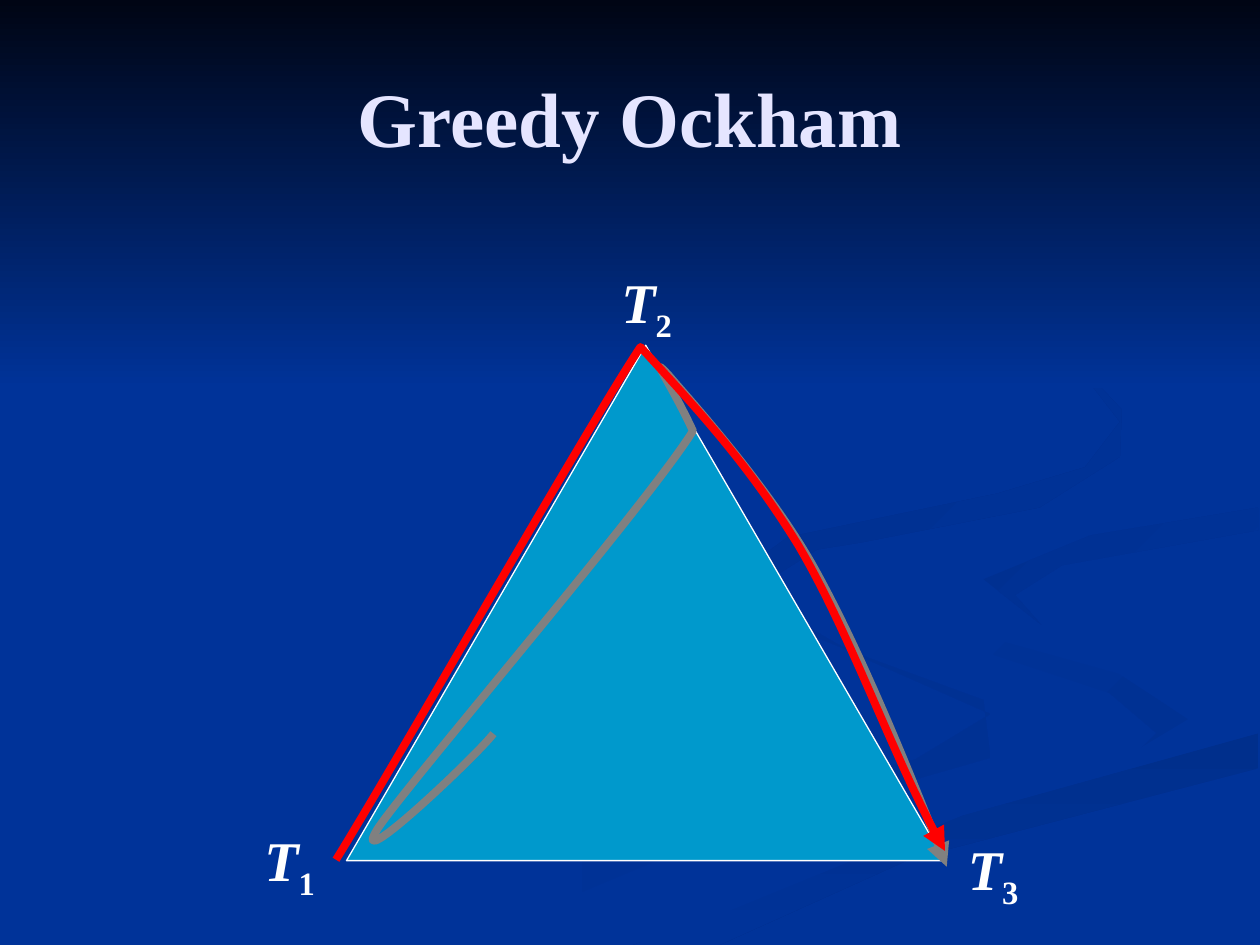
from lxml.etree import SubElement
from pptx import Presentation
from pptx.dml.color import RGBColor
from pptx.enum.shapes import MSO_SHAPE
from pptx.enum.text import MSO_ANCHOR, PP_ALIGN
from pptx.oxml.ns import qn
from pptx.util import Pt

FONT = "Times New Roman"
NAVY = "003399"

SWIRLS = [
    ((NAVY, "003193", 0), [
        (346, 232), (275, 206), (212, 181), (198, 163), (273, 206), (350, 240),
        (307, 266), (172, 300), (0, 372), (44, 372), (190, 311), (350, 265)]),
    ((NAVY, "003193", 45), [
        (463, 243), (423, 217), (330, 191), (305, 166), (336, 201), (418, 228),
        (445, 251), (428, 268), (459, 254)]),
    (("002F8C", NAVY, 90), [
        (146, 372), (195, 372), (304, 323), (503, 271), (503, 251), (334, 298)]),
    ((NAVY, NAVY, 0), [
        (306, 166), (330, 191), (424, 217), (463, 243), (418, 270), (261, 313),
        (127, 372), (158, 370), (334, 298), (503, 251), (503, 220), (395, 194),
        (347, 163), (407, 138), (503, 122), (503, 111), (366, 132)]),
    (("003091", NAVY, 45), [
        (346, 163), (379, 189), (364, 172), (391, 155), (503, 135), (503, 122), (407, 138)]),
    (("002F8E", NAVY, 45), [
        (276, 142), (378, 122), (424, 93), (425, 66), (391, 30), (333, 0), (393, 33),
        (424, 73), (404, 99), (354, 114), (234, 139), (199, 165), (232, 192), (211, 171),
        (251, 146)]),
]
GRAY_ROUTE = [
    (84, 222), (75, 234), (-1, 306), (18, 276), (37, 248), (171, 92), (198, 49), (185, 21),
    (172, 4), (184, 17), (195, 30), (239, 78), (266, 125), (292, 171), (324, 249), (343, 298)]
RED_ROUTE = [
    (-6, 294), (24, 246), (141, 41), (168, 1), (200, 36), (229, 67), (258, 114), (287, 163),
    (314, 240), (342, 289)]
LABELS = [("1", -54, 271), ("2", 150, -48), ("3", 348, 276)]


def rgb(color):
    """Return the colour for a hex string."""
    return RGBColor.from_string(color)


def fill_gradient(sp, start, end, angle):
    """Fill a shape with two colours, the angle running clockwise, and no outline."""
    sp.shadow.inherit = False
    sp.line.fill.background()
    sp.fill.gradient()
    sp.fill.gradient_angle = -angle % 360
    for stop, color in zip(sp.fill.gradient_stops, (start, end)):
        stop.color.rgb = rgb(color)


def add_outline(s, points, x, y, close):
    """Add a freeform whose points are relative to x, y."""
    builder = s.shapes.build_freeform(*points[0], scale=Pt(1))
    builder.add_line_segments(points[1:], close=close)
    return builder.convert_to_shape(Pt(x), Pt(y))


def add_route(s, points, x, y, color):
    """Add a curved arrow from a start point and triples of Bezier points."""
    sp = add_outline(s, points, x, y, False)
    sp.shadow.inherit = False
    sp.fill.background()
    sp.line.color.rgb = rgb(color)
    sp.line.width = Pt(4.5)
    SubElement(sp.line._get_or_add_ln(), qn("a:tailEnd"), type="triangle")
    segments = list(sp._element.iter(qn("a:lnTo")))
    for i in range(0, len(segments), 3):
        curve = SubElement(segments[i].getparent(), qn("a:cubicBezTo"))
        for segment in segments[i:i + 3]:
            curve.append(segment[0])
            segment.getparent().remove(segment)


def add_run(p, text, size, color):
    """Add a bold run and return it."""
    r = p.add_run()
    r.text = text
    r.font.name, r.font.size, r.font.bold = FONT, Pt(size), True
    r.font.color.rgb = rgb(color)
    return r


def add_backdrop(s, x, y, w, h):
    """Draw the background, its swirls and the dark band across the top."""
    s.background.fill.solid()
    s.background.fill.fore_color.rgb = rgb(NAVY)
    for gradient, points in SWIRLS:
        fill_gradient(add_outline(s, points, x + 216, y + 168, True), *gradient)
    band = s.shapes.add_shape(MSO_SHAPE.RECTANGLE, Pt(x), Pt(y), Pt(w), Pt(h))
    fill_gradient(band, "000514", NAVY, 90)


def add_title(s, x, y, w, h):
    """Write the centred title."""
    tf = s.shapes.add_textbox(Pt(x), Pt(y), Pt(w), Pt(h)).text_frame
    tf.word_wrap = True
    tf.vertical_anchor = MSO_ANCHOR.MIDDLE
    p = tf.paragraphs[0]
    p.alignment = PP_ALIGN.CENTER
    add_run(p, "Greedy Ockham", 44, "E5E5FF")


def add_theory_triangle(s, x, y, w, h):
    """Draw the triangle, its corner labels and the two routes."""
    sp = s.shapes.add_shape(MSO_SHAPE.ISOSCELES_TRIANGLE, Pt(x), Pt(y), Pt(w), Pt(h))
    sp.shadow.inherit = False
    sp.fill.solid()
    sp.fill.fore_color.rgb = rgb("0099CC")
    sp.line.color.rgb = rgb("FFFFFF")
    sp.line.width = Pt(0.75)
    for index, dx, dy in LABELS:
        tf = s.shapes.add_textbox(Pt(x + dx), Pt(y + dy), Pt(46), Pt(46)).text_frame
        tf.word_wrap = False
        p = tf.paragraphs[0]
        add_run(p, "T", 32, "FFFFFF").font.italic = True
        r = add_run(p, index, 32, "FFFFFF")
        r._r.get_or_add_rPr().set("baseline", "-25000")
    add_route(s, GRAY_ROUTE, x, y, "808080")
    add_route(s, RED_ROUTE, x, y, "FF0000")


def main():
    """Build the slide and save it."""
    prs = Presentation()
    prs.slide_width, prs.slide_height = Pt(720), Pt(540)
    s = prs.slides.add_slide(prs.slide_layouts[6])
    add_backdrop(s, 0, 0, 720, 222)
    add_title(s, 36, 21.6, 648, 90)
    add_theory_triangle(s, 198, 197.3, 342, 294.5)
    prs.save("out.pptx")


if __name__ == "__main__":
    main()
